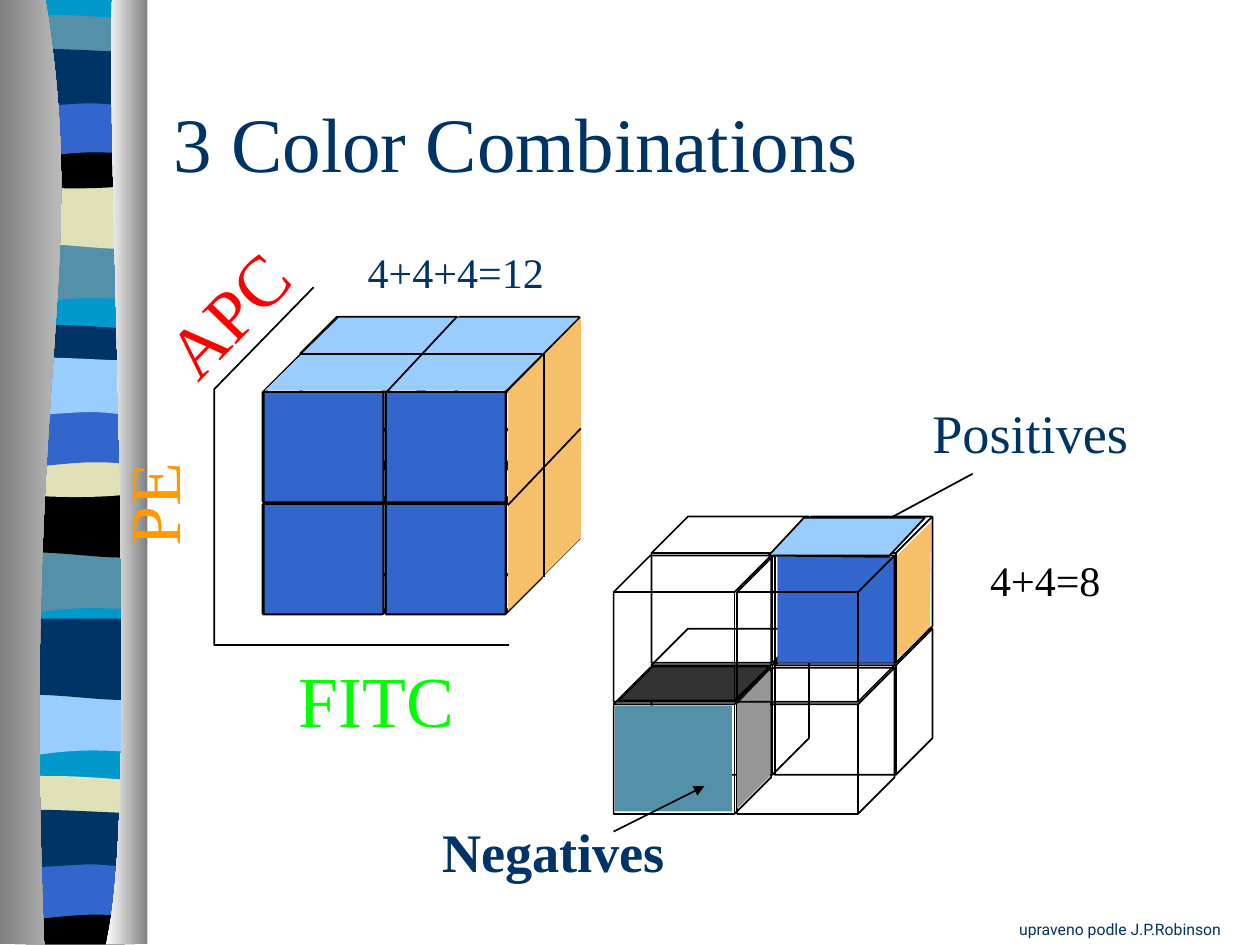
from dataclasses import dataclass

from lxml.etree import SubElement
from pptx import Presentation
from pptx.dml.color import RGBColor
from pptx.enum.shapes import MSO_CONNECTOR, MSO_SHAPE
from pptx.enum.text import MSO_ANCHOR, MSO_AUTO_SIZE
from pptx.oxml.ns import qn
from pptx.slide import Slide
from pptx.util import Inches, Pt

COLUMNS, ROWS, CELL = 100, 75, Inches(0.1)

NAVY = RGBColor(0x00, 0x33, 0x66)
BLUE = RGBColor(0x33, 0x66, 0xCC)
SKY = RGBColor(0x99, 0xCC, 0xFF)
CYAN = RGBColor(0x00, 0x99, 0xCC)
TEAL = RGBColor(0x54, 0x90, 0xA8)
SAND = RGBColor(0xE1, 0xE1, 0xB7)
APRICOT = RGBColor(0xF6, 0xBF, 0x69)
BLACK = RGBColor(0x00, 0x00, 0x00)
CHARCOAL = RGBColor(0x33, 0x33, 0x33)
GREY = RGBColor(0x96, 0x96, 0x96)
STEEL = RGBColor(0x80, 0x80, 0x80)
SILVER = RGBColor(0xD8, 0xD8, 0xD8)
WHITE = RGBColor(0xFF, 0xFF, 0xFF)
GREEN = RGBColor(0x00, 0xFF, 0x00)
ORANGE = RGBColor(0xFF, 0x99, 0x00)
RED = RGBColor(0xFF, 0x00, 0x00)

LEFT, RIGHT = 0.5, 11.4
SWELL = [(RIGHT, -0.8), (RIGHT, 5.4), (3.9, 4.6, 2.4, 6.2, LEFT, 5.4), (LEFT, -0.8)]
RIPPLE = [(RIGHT, -0.8), (RIGHT, 5.4), (9.6, 6.2, 3.9, 4.8, LEFT, 5.4), (LEFT, -0.8)]
CREST = [(RIGHT, -0.5), (RIGHT, 2.9), (9.6, 3.4, 2.4, 3.4, LEFT, 2.9), (LEFT, -0.5),
         (1.2, -1, 2.9, -0.9, 4.7, -0.9), (6.5, -0.9, 10, -0.6, RIGHT, -0.5)]
BOWL = [(RIGHT, -0.5), (RIGHT, 3.7), (9.6, 4.3, 2.4, 4.3, LEFT, 3.7), (LEFT, -0.5),
        (7.2, 0, 9.1, -0.5, RIGHT, -0.5)]
ARCH = [(RIGHT, -0.5), (RIGHT, 5.2), (9.7, 4.7, 9, 4.7, 7.2, 4.7),
        (5.4, 4.7, 2.2, 5.2, LEFT, 5.2), (LEFT, -0.5)]
DRIFT = [(RIGHT, -0.5), (RIGHT, 3.6), (10.7, 4.1, 9, 3.6, 7.2, 3.6),
         (5.4, 3.6, 1.7, 4.1, LEFT, 3.6), (LEFT, -0.5), (2.1, -1, 7.9, -0.5, 9.7, -0.5)]
WAVES = [SWELL, RIPPLE, CREST, BOWL, ARCH, DRIFT]
BAND_SETS = [
    [(18.5, TEAL), (14.1, SAND), (2.1, TEAL), (10.8, BLACK), (7.4, BLUE), (4.6, NAVY)],
    [(43.1, TEAL), (38.6, BLACK), (26.7, NAVY), (35.3, SAND), (32, BLUE), (29.1, SKY)],
    [(54.4, SKY), (49.9, NAVY), (62.5, SAND), (71.2, BLACK), (67.9, BLUE), (65, NAVY)],
]


@dataclass
class Canvas:
    """Draws styled elements on one slide, measured in grid cells."""
    slide: Slide
    font: str = "Times New Roman"

    def paint(self, shape, fill, weight):
        """Set the fill and outline of a shape."""
        shape.shadow.inherit = False
        if fill is None:
            shape.fill.background()
        elif isinstance(fill, list):
            shape.fill.gradient()
            shape.fill.gradient_angle = 0
            for stop, color in zip(shape.fill.gradient_stops, fill):
                stop.color.rgb = color
        else:
            shape.fill.solid()
            shape.fill.fore_color.rgb = fill
        if weight:
            shape.line.color.rgb = BLACK
            shape.line.width = Pt(weight)
        else:
            shape.line.fill.background()

    def outline(self, segments, fill=None, weight=0, top=0, close=True):
        """Draw points and Bezier segments, cut off at the foot of the slide."""
        points = [(x * CELL, min(y + top, ROWS) * CELL)
                  for segment in segments for x, y in zip(segment[::2], segment[1::2])]
        builder = self.slide.shapes.build_freeform(*points[0])
        builder.add_line_segments(points[1:], close=close)
        shape = builder.convert_to_shape()
        strokes = iter(list(shape._element.iter(qn("a:lnTo"))))
        for segment in segments[1:]:
            stroke = next(strokes)
            if len(segment) == 6:
                stroke.tag = qn("a:cubicBezTo")
                for follower in (next(strokes), next(strokes)):
                    stroke.append(follower[0])
                    follower.getparent().remove(follower)
        self.paint(shape, fill, weight)

    def block(self, kind, column, row, width, height, fill=None, weight=0):
        """Draw a preset shape."""
        shape = self.slide.shapes.add_shape(
            kind, *(int(n * CELL) for n in (column, row, width, height)))
        self.paint(shape, fill, weight)

    def cubes(self, column, row, width, height, step, depths, weight):
        """Draw rows of two cubes, each row one depth step nearer."""
        for depth in depths:
            for place in range(2):
                self.block(MSO_SHAPE.CUBE, column + place * step - 3 * depth,
                           row + 3.1 * depth, width, height, weight=weight)

    def line(self, start, end, arrow=False):
        """Draw a straight line, with an arrowhead if asked."""
        connector = self.slide.shapes.add_connector(
            MSO_CONNECTOR.STRAIGHT, *(int(n * CELL) for n in (*start, *end)))
        connector.line.color.rgb = BLACK
        connector.line.width = Pt(1)
        if arrow:
            SubElement(connector.line._get_or_add_ln(), qn("a:tailEnd"), type="triangle")
        SubElement(connector._element.spPr, qn("a:effectLst"))

    def text(self, words, column, row, width, height, size, color, inset=1, wrap=False,
             rotation=0, bold=False, font=None, anchor=MSO_ANCHOR.TOP, grow=True):
        """Write one paragraph in a text box."""
        box = self.slide.shapes.add_textbox(
            *(int(n * CELL) for n in (column, row, width, height)))
        box.rotation = rotation
        frame = box.text_frame
        frame.word_wrap = wrap
        frame.auto_size = MSO_AUTO_SIZE.SHAPE_TO_FIT_TEXT if grow else MSO_AUTO_SIZE.NONE
        frame.vertical_anchor = anchor
        frame.margin_left = frame.margin_right = int(inset * CELL)
        frame.margin_top = frame.margin_bottom = int(inset * CELL / 2)
        paragraph = frame.paragraphs[0]
        paragraph.text = words
        paragraph.font.name = font or self.font
        paragraph.font.size = Pt(size)
        paragraph.font.bold = bold
        paragraph.font.color.rgb = color


def draw_border(canvas):
    """Draw the wavy band along the left edge."""
    canvas.outline([(RIGHT, 0), (RIGHT, 74.7), (LEFT, 74.7), (LEFT, 0)], CYAN)
    for bands in BAND_SETS:
        for wave, (top, color) in zip(WAVES, bands):
            canvas.outline(wave, color, top=top)
    canvas.outline([(3.6, 0), (7.2, 21.6, 1.7, 29.6, 3.5, 74.9), (0, 74.9), (0, 0)],
                   [STEEL, SILVER])
    canvas.outline([(8.9, 0), (8.4, 12.5, 11.2, 64.6, 8.4, 74.9), (11.7, 74.9), (11.7, 0)],
                   [WHITE, STEEL])


def draw_open_cube(canvas):
    """Draw the cube of positives and negatives."""
    canvas.cubes(51.7, 49.9, 12.5, 11.6, 9.8, (0, 1), 1)
    canvas.outline([(49.1, 55.6), (51.8, 52.9), (61.1, 52.9), (58.3, 55.6)], CHARCOAL, 1)
    canvas.outline([(71.2, 52.3), (71.2, 44.1), (73.9, 41.4), (73.8, 49.8)], APRICOT)
    canvas.outline([(58.5, 64.2), (58.5, 55.9), (61.1, 53.2), (61.1, 61.6)], GREY)
    canvas.block(MSO_SHAPE.RECTANGLE, 48.8, 56, 9.3, 8.4, TEAL)
    canvas.text("Negatives", 33.4, 64.1, 21.4, 6.9, 31, NAVY, 1.7, bold=True)
    canvas.text("Positives", 72.3, 30.8, 24, 6.9, 31, NAVY, 1.7, wrap=True)
    canvas.line((48.7, 66), (55.9, 62.4), arrow=True)
    canvas.line((77.2, 37.6), (67.9, 42.6), arrow=True)
    canvas.text("4+4=8", 77.6, 43.5, 10.8, 5, 24, BLACK)
    canvas.cubes(51.7, 41, 12.5, 11.6, 9.8, (0,), 1)
    canvas.block(MSO_SHAPE.RECTANGLE, 61.7, 44.2, 9.3, 8.4, BLUE)
    canvas.outline([(61, 44.1), (63.8, 41.1), (73.4, 41.1), (70.5, 44.2)], SKY, 1)
    canvas.cubes(51.7, 41, 12.5, 11.6, 9.8, (1,), 1)


def draw_full_cube(canvas):
    """Draw the filled cube with its three axes."""
    for row in (34.1, 25.2):
        canvas.cubes(23.9, row, 12.3, 11.5, 9.75, (0, 1), 2)
    canvas.outline([(24.9, 22.8), (17, 30.9), (17, 51.2), (40.4, 51.2)],
                   weight=1, close=False)
    canvas.text("FITC", 22, 51.2, 15.9, 8.6, 41, GREEN, 1.7)
    canvas.text("PE", 7, 35.7, 10.2, 8.6, 41, ORANGE, 1.7, rotation=270)
    canvas.text("APC", 10.7, 20.5, 14.7, 8.6, 41, RED, 1.7, rotation=314)
    canvas.outline([(26.9, 25.2), (21, 31), (40.1, 31), (45.9, 25.2)], SKY)
    canvas.line((30.6, 31.2), (36.3, 25.1))
    canvas.line((43, 28.1), (23.8, 28.1))
    for row in (31.2, 40.1):
        for column in (21, 30.7):
            canvas.block(MSO_SHAPE.RECTANGLE, column, row, 9.35, 8.6, BLUE)
    canvas.outline([(40.3, 31.1), (40.3, 48.5), (46.1, 42.7), (46.1, 25.2)], APRICOT)
    canvas.line((43.2, 45.8), (43.2, 28.1))
    canvas.line((40.3, 40.1), (46.1, 34))
    canvas.text("4+4+4=12", 28.2, 19.1, 16.1, 5, 24, NAVY, wrap=True)


def main():
    """Build and save the slide."""
    deck = Presentation()
    deck.slide_width, deck.slide_height = COLUMNS * CELL, ROWS * CELL
    canvas = Canvas(deck.slides.add_slide(deck.slide_layouts[6]))
    draw_border(canvas)
    canvas.text("3 Color Combinations", 12.8, 5, 85, 12.5, 44, NAVY, wrap=True,
                anchor=MSO_ANCHOR.MIDDLE, grow=False)
    draw_open_cube(canvas)
    draw_full_cube(canvas)
    canvas.text("upraveno podle J.P.Robinson", 79.9, 72.5, 20.1, 2.5, 9, NAVY,
                wrap=True, font="Roboto")
    deck.save("out.pptx")


if __name__ == "__main__":
    main()
